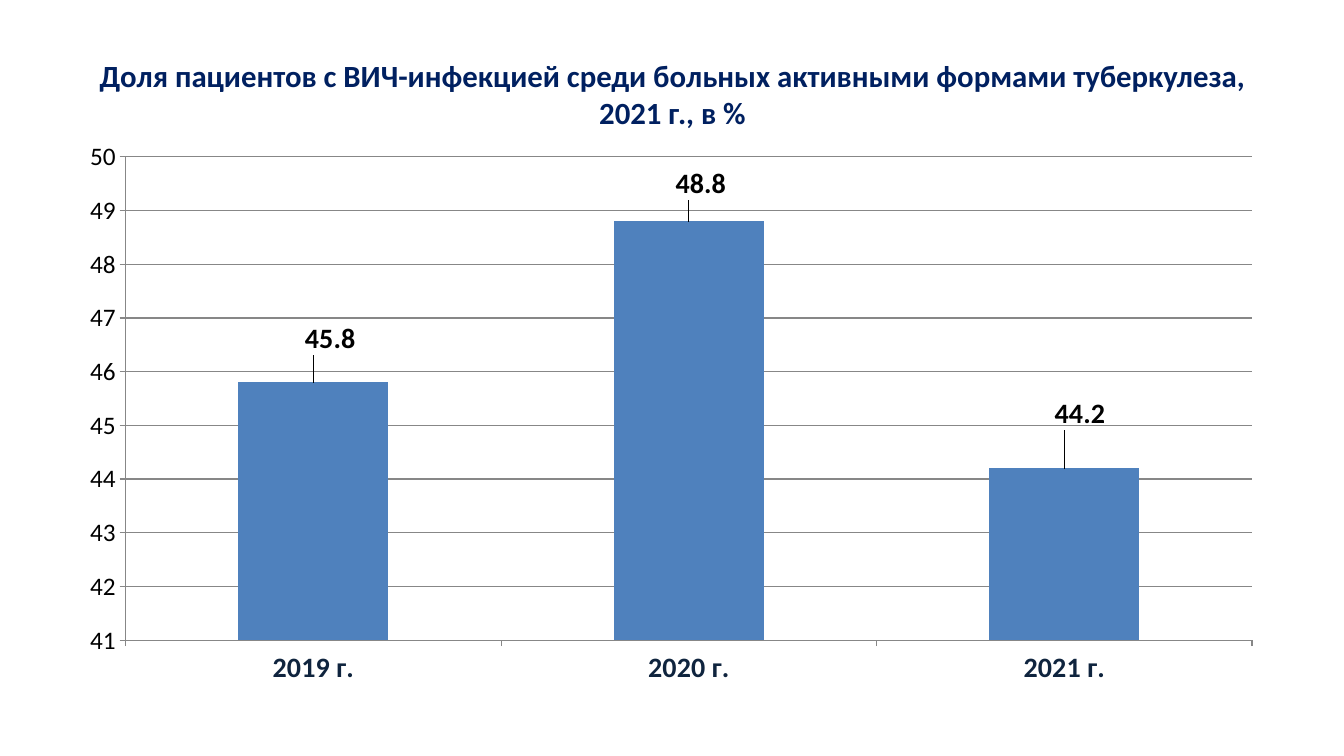
from lxml import etree
from pptx import Presentation
from pptx import util as u
from pptx.chart import data as cd
from pptx.dml import color as col
from pptx.enum import chart as ec, text as et
from pptx.oxml import ns

COLORS = {"title": "002060", "cats": "0F243E", "text": "000000",
          "bar": "4F81BD", "line": "878787"}
FACE = "Calibri"
YEARS = ["2019 г.", "2020 г.", "2021 г."]
SHARES = [45.8, 48.8, 44.2]
SHIFTS = [(0.014, -0.04), (0.01, -0.03), (0.013, -0.06)]


def rgb(key):
    return col.RGBColor.from_string(COLORS[key])


def style(item, **vals):
    for key, val in vals.items():
        setattr(item, key, val)


def font(item, size, key, bold):
    style(item, size=u.Pt(size), bold=bold, name=FACE)
    item.color.rgb = rgb(key)


def place(shape, left, top, width, height):
    style(shape, left=u.Inches(left), top=u.Inches(top),
          width=u.Inches(width), height=u.Inches(height))


def layout(**vals):
    root = etree.Element(ns.qn("c:layout"))
    manual = etree.SubElement(root, ns.qn("c:manualLayout"))
    for key, val in vals.items():
        etree.SubElement(manual, ns.qn("c:" + key)).set("val", str(val))
    return root


def add_title(slide, words):
    title = slide.shapes.title
    place(title, 0.67, 0.3, 12, 1.25)
    frame = title.text_frame
    style(frame, text=words, word_wrap=True,
          vertical_anchor=et.MSO_ANCHOR.MIDDLE)
    par = frame.paragraphs[0]
    par.alignment = et.PP_ALIGN.CENTER
    font(par.runs[0].font, 22, "title", True)


def draw_line(form):
    form.line.color.rgb = rgb("line")
    form.line.width = u.Pt(0.75)


def set_axes(chart):
    cats, vals = chart.category_axis, chart.value_axis
    style(vals, minimum_scale=41, maximum_scale=50, major_unit=1,
          has_major_gridlines=True)
    for axis in (cats, vals):
        style(axis, major_tick_mark=ec.XL_TICK_MARK.OUTSIDE,
              minor_tick_mark=ec.XL_TICK_MARK.NONE)
        draw_line(axis.format)
    draw_line(vals.major_gridlines.format)
    font(cats.tick_labels.font, 20, "cats", True)
    font(vals.tick_labels.font, 18, "text", False)


def set_labels(bars):
    labels = bars.data_labels
    style(labels, show_value=True, position=ec.XL_LABEL_POSITION.OUTSIDE_END)
    font(labels.font, 20, "text", True)
    for num, (x, y) in enumerate(SHIFTS):
        label = bars.points[num].data_label
        font(label.font, 20, "text", True)
        label.position = ec.XL_LABEL_POSITION.OUTSIDE_END
    for mark, (x, y) in zip(labels._element.findall(ns.qn("c:dLbl")), SHIFTS):
        mark.find(ns.qn("c:idx")).addnext(layout(x=x, y=y))


def add_bars(slide):
    data = cd.CategoryChartData()
    data.categories = YEARS
    data.add_series("Series 1", SHARES)
    box = [u.Inches(n) for n in (0.67, 1.3, 12, 5.6)]
    chart = slide.shapes.add_chart(
        ec.XL_CHART_TYPE.COLUMN_CLUSTERED, *box, data).chart
    style(chart, has_legend=False, has_title=False)
    font(chart.font, 18, "text", False)
    plot = chart.plots[0]
    style(plot, gap_width=150, vary_by_categories=False)
    bars = plot.series[0]
    bars.format.fill.solid()
    bars.format.fill.fore_color.rgb = rgb("bar")
    set_axes(chart)
    set_labels(bars)
    area = chart._chartSpace.chart.plotArea
    for old in area.findall(ns.qn("c:layout")):
        area.remove(old)
    area.insert(0, layout(layoutTarget="inner", xMode="edge", yMode="edge",
                          x=0.048, y=0.046, w=0.931, h=0.856))


def main():
    deck = Presentation()
    style(deck, slide_width=u.Inches(13.33), slide_height=u.Inches(7.5))
    slide = deck.slides.add_slide(deck.slide_layouts[5])
    add_title(slide, "Доля пациентов с ВИЧ-инфекцией среди больных "
                     "активными формами туберкулеза, 2021 г., в %")
    add_bars(slide)
    deck.save("out.pptx")


if __name__ == "__main__":
    main()
